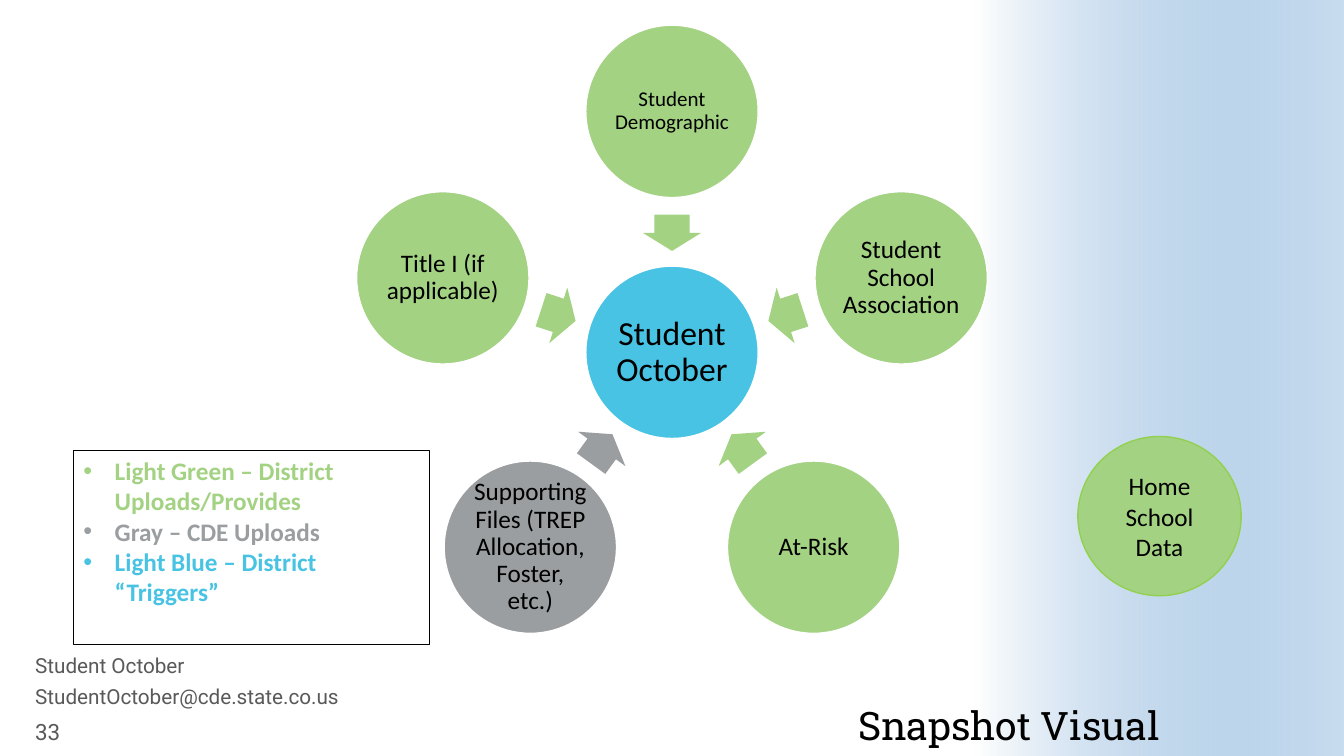
"""Build the Student October snapshot slide."""
import math
from dataclasses import dataclass

from lxml import etree
from pptx import Presentation
from pptx import util as u
from pptx.dml.color import RGBColor
from pptx.enum import shapes, text
from pptx.oxml.ns import qn

PX = 9144


@dataclass(frozen=True)
class Theme:
    """Colours, fonts and type sizes of the slide."""
    green: str = "A3D283"
    gray: str = "9A9EA0"
    blue: str = "48C3E3"
    band: str = "488BC9"
    rim: str = "92D050"
    white: str = "FFFFFF"
    black: str = "000000"
    muted: str = "595959"
    sans: str = "Calibri"
    foot: str = "Roboto"
    slab: str = "Roboto Slab"
    title: float = 28
    hub: float = 24
    label: float = 18
    small: float = 15
    number: float = 16
    footer: float = 14.8


T = Theme()


def px(n):
    """Turn px into EMU."""
    return u.Emu(round(n * PX))


def apply(obj, values):
    """Set each attribute named in a dict."""
    for name, value in values.items():
        setattr(obj, name, value)


def write(p, words, face, size, color, bold=False, **para):
    """Fill one paragraph with a formatted run."""
    apply(p, para)
    r = p.add_run()
    r.text = words
    apply(r.font, {"name": face, "size": u.Pt(size), "bold": bold})
    r.font.color.rgb = RGBColor.from_string(color)


def frame(sp, anchor, x=10, y=5):
    """Set wrapping, anchor and insets, and return the text frame."""
    tf = sp.text_frame
    apply(tf, {"word_wrap": True, "auto_size": text.MSO_AUTO_SIZE.NONE,
               "vertical_anchor": anchor, "margin_left": px(x), "margin_right": px(x),
               "margin_top": px(y), "margin_bottom": px(y)})
    return tf


def add_shape(s, kind, box, fill=None, line=None, weight=1):
    """Add a flat preset shape in a box."""
    sp = s.shapes.add_shape(kind, *map(px, box))
    sp.shadow.inherit = False
    if fill:
        sp.fill.solid()
        sp.fill.fore_color.rgb = RGBColor.from_string(fill)
    else:
        sp.fill.background()
    if line:
        sp.line.color.rgb = RGBColor.from_string(line)
        sp.line.width = u.Pt(weight)
    else:
        sp.line.fill.background()
    return sp


def add_band(s, box):
    """Place the fading band behind everything."""
    sp = add_shape(s, shapes.MSO_SHAPE.RECTANGLE, box)
    sp.fill.gradient()
    sp.fill.gradient_angle = 0
    for stop, color in zip(sp.fill.gradient_stops, (T.white, T.band)):
        stop.color.rgb = RGBColor.from_string(color)
    last = sp.element.findall(".//" + qn("a:srgbClr"))[-1]
    etree.SubElement(last, qn("a:alpha"), val="30000")
    sp.element.getparent().insert(2, sp.element)


def add_title(s, box, words):
    """Move and format the title placeholder."""
    sp = s.shapes.title
    apply(sp, dict(zip(("left", "top", "width", "height"), map(px, box))))
    tf = frame(sp, text.MSO_ANCHOR.BOTTOM, 0, 0)
    write(tf.paragraphs[0], words, T.slab, T.title, T.black,
          alignment=text.PP_ALIGN.RIGHT, line_spacing=0.9)


def add_circle(s, box, words, fill, line=T.white, size=T.label, inset=(3, 3), spacing=0.9):
    """Place a circle with a centred label."""
    sp = add_shape(s, shapes.MSO_SHAPE.OVAL, box, fill, line)
    tf = frame(sp, text.MSO_ANCHOR.MIDDLE, *inset)
    write(tf.paragraphs[0], words, T.sans, size, T.black,
          alignment=text.PP_ALIGN.CENTER, line_spacing=spacing)


def add_wheel(s, box, hub, spokes):
    """Place a hub with circles around it and arrows pointing inwards."""
    left, top, width, height = box
    cx, cy = left + width / 2, top + height / 2
    disc, orbit, arrow_orbit = 171, 239, 118.5
    arrow_w, arrow_h = 36, 58
    step = 360 / len(spokes)

    def around(angle, radius, w, h):
        """Return a box centred on a point of a ring."""
        a = math.radians(angle)
        return (cx + radius * math.cos(a) - w / 2, cy + radius * math.sin(a) - h / 2, w, h)

    add_circle(s, around(0, 0, disc, disc), hub, T.blue, size=T.hub)
    for i, (words, fill, size, side) in enumerate(spokes):
        angle = i * step - 90
        sp = add_shape(s, shapes.MSO_SHAPE.RIGHT_ARROW,
                       around(angle, arrow_orbit, arrow_w, arrow_h), fill)
        sp.adjustments[0], sp.adjustments[1] = 0.6, 0.5
        sp.rotation = (angle + 180) % 360
        add_circle(s, around(angle, orbit, disc, disc), words, fill, size=size,
                   inset=(side, 3))


def add_legend(s, box, entries):
    """Place the outlined colour key."""
    sp = add_shape(s, shapes.MSO_SHAPE.RECTANGLE, box, line=T.black, weight=0.75)
    tf = frame(sp, text.MSO_ANCHOR.TOP)
    for i, (words, color) in enumerate(entries):
        p = tf.add_paragraph() if i else tf.paragraphs[0]
        pPr = p._p.get_or_add_pPr()
        pPr.set("marL", str(px(31)))
        pPr.set("indent", str(px(-31)))
        etree.SubElement(pPr, qn("a:buFont"), typeface="Arial")
        etree.SubElement(pPr, qn("a:buChar"), char="•")
        write(p, words, T.sans, T.label, color, True, alignment=text.PP_ALIGN.LEFT)


def add_footer(s, box, lines, number):
    """Place the contact lines and the slide number below each other."""
    left, top, width, height = box
    row = height / (len(lines) + 1)
    rows = [(words, width, T.footer, 0.8, text.MSO_ANCHOR.TOP) for words in lines]
    rows.append((number, 85, T.number, 1.0, text.MSO_ANCHOR.MIDDLE))
    for i, (words, w, size, spacing, anchor) in enumerate(rows):
        sp = s.shapes.add_textbox(*map(px, (left, top + i * row, w, row)))
        tf = frame(sp, anchor)
        write(tf.paragraphs[0], words, T.foot, size, T.muted, line_spacing=spacing)


def main():
    """Build and save the slide."""
    prs = Presentation()
    apply(prs, {"slide_width": px(1333), "slide_height": px(750)})
    s = prs.slides.add_slide(prs.slide_layouts[5])
    add_band(s, (967, 0, 366, 750))
    add_title(s, (426, 645, 724, 98), "Snapshot Visual")
    add_wheel(s, (354, 25, 625, 649), "Student October", [
        ("Student Demographic", T.green, T.small, 3),
        ("Student School Association", T.green, T.label, 0),
        ("At-Risk", T.green, T.label, 3),
        ("Supporting Files (TREP Allocation, Foster, etc.)", T.gray, T.label, 3),
        ("Title I (if applicable)", T.green, T.label, 3),
    ])
    add_legend(s, (73, 447, 353, 192), [
        ("Light Green – District Uploads/Provides", T.green),
        ("Gray – CDE Uploads", T.gray),
        ("Light Blue – District “Triggers”", T.blue),
    ])
    add_circle(s, (1069, 433, 162, 158), "Home School Data", T.green, T.rim,
               inset=(10, 5), spacing=1.0)
    add_footer(s, (25, 647, 389, 95),
               ["Student October", "StudentOctober@cde.state.co.us"], "33")
    prs.save("out.pptx")


if __name__ == "__main__":
    main()
